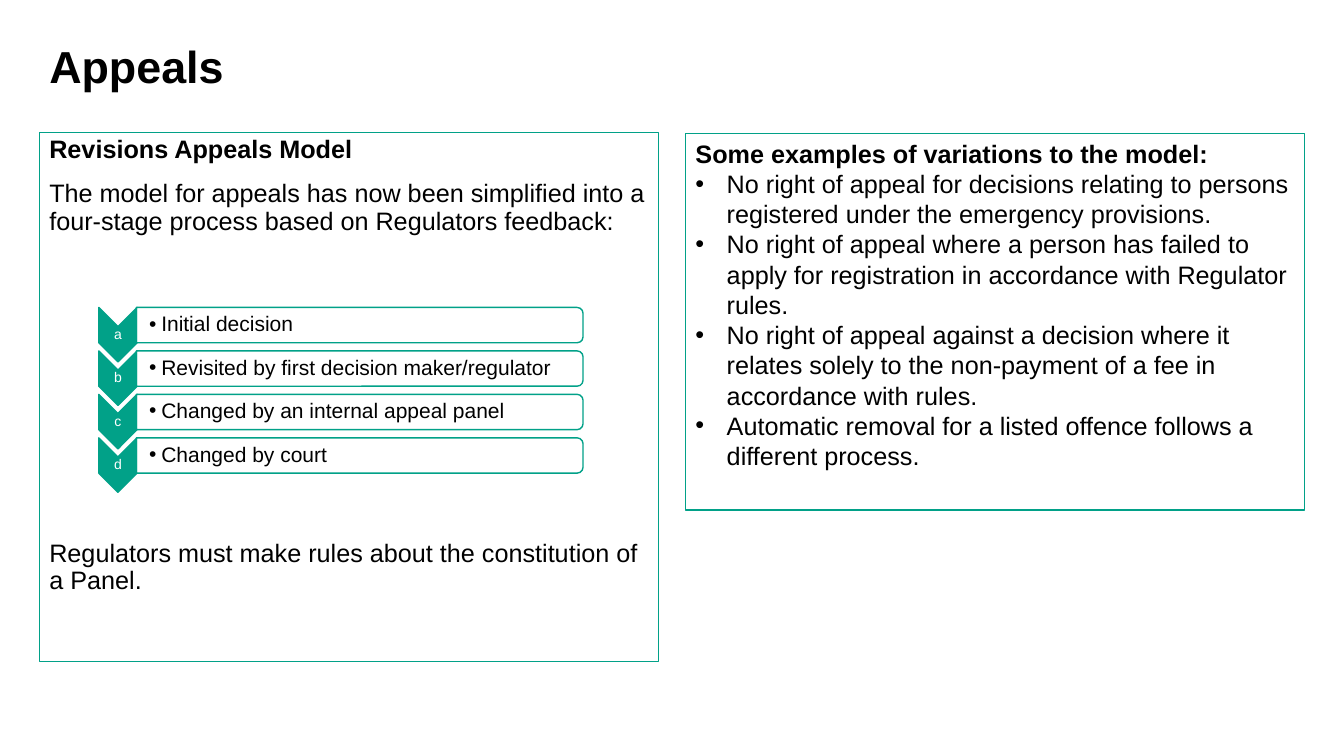
from pptx import Presentation
from pptx.dml.color import RGBColor
from pptx.enum.shapes import MSO_SHAPE as SHAPE
from pptx.enum.text import MSO_ANCHOR as ANCHOR, PP_ALIGN as ALIGN
from pptx.oxml.ns import qn
from pptx.util import Inches, Pt
from lxml import etree

COLORS = {"text": "000000", "accent": "01A188", "white": "FFFFFF"}
BODY = {"size": Pt(18)}
HEADING = {**BODY, "bold": True}
TIGHT = {"line_spacing": 0.9}
SPACED = {**TIGHT, "space_after": Pt(12)}
SMALL_INSETS = {f"margin_{side}": Inches(0.01) for side in ("left", "top", "right", "bottom")}


def rgb(name):
    return RGBColor.from_string(COLORS[name])


def style(target, values):
    for name, value in values.items():
        setattr(target, name, value)


class Deck:
    """Slide builder; lengths are columns and rows of a 100 by 100 grid."""
    font = "Arial"

    def __init__(self):
        self.prs = Presentation()
        self.prs.slide_width, self.prs.slide_height = Inches(13.33), Inches(7.5)
        self.s = self.prs.slides.add_slide(self.prs.slide_layouts[6])

    def place(self, x, y, w, h):
        col, row = self.prs.slide_width / 100, self.prs.slide_height / 100
        return [round(v) for v in (x * col, y * row, w * col, h * row)]

    def shape(self, kind, box, fill=None, line=1.0, turned=False, opacity=100):
        """Draw a preset shape; a turned one fills the box after a quarter turn."""
        x, y, w, h = self.place(*box)
        if turned:
            x, y, w, h = x + (w - h) // 2, y + (h - w) // 2, h, w
        sp = self.s.shapes.add_shape(kind, x, y, w, h)
        sp.rotation = 90 if turned else 0
        sp.shadow.inherit = False
        sp.line.color.rgb, sp.line.width = rgb("accent"), Pt(line)
        if fill is None:
            sp.fill.background()
        else:
            sp.fill.solid()
            sp.fill.fore_color.rgb = rgb(fill)
            if opacity < 100:
                color = sp._element.spPr.find(f"{qn('a:solidFill')}/{qn('a:srgbClr')}")
                etree.SubElement(color, qn("a:alpha"), val=str(opacity * 1000))
        return sp

    def textbox(self, box):
        return self.s.shapes.add_textbox(*self.place(*box))

    def add_text(self, sp, paragraphs, frame=None, color="text"):
        """Fill a shape with (text, font, paragraph format, bullet indent) entries."""
        tf = sp.text_frame
        style(tf, {"word_wrap": True, "vertical_anchor": ANCHOR.TOP, **(frame or {})})
        for i, (text, font, fmt, indent) in enumerate(paragraphs):
            p = tf.add_paragraph() if i else tf.paragraphs[0]
            if indent:
                self.bullet(p, indent)
            style(p, {"alignment": ALIGN.LEFT, **fmt})
            r = p.add_run()
            r.text = text
            style(r.font, {"name": self.font, **font})
            r.font.color.rgb = rgb(color)

    def bullet(self, p, indent):
        pPr = p._p.get_or_add_pPr()
        pPr.set("marL", str(Inches(indent)))
        pPr.set("indent", str(-Inches(indent)))
        etree.SubElement(pPr, qn("a:buFont"), typeface=self.font)
        etree.SubElement(pPr, qn("a:buChar"), char="•")

    def stage(self, y, letter, text):
        """Draw one step: a downward chevron with its letter and a rounded bar."""
        self.shape(SHAPE.CHEVRON, (7.35, y, 2.85, 7.2), "accent", turned=True)
        self.add_text(self.textbox((7.35, y + 2.53, 2.85, 2.13)),
                      [(letter, {"size": Pt(10)}, {**TIGHT, "alignment": ALIGN.CENTER}, 0)],
                      {**SMALL_INSETS, "vertical_anchor": ANCHOR.MIDDLE}, "white")
        self.shape(SHAPE.ROUND_2_SAME_RECTANGLE, (10.15, y, 33.23, 4.67), "white",
                   turned=True, opacity=90)
        self.add_text(self.textbox((10.2, y + 0.2, 33.08, 4.27)),
                      [(text, {"size": Pt(15)}, TIGHT, 0.12)],
                      {**SMALL_INSETS, "margin_left": Inches(0.12),
                       "vertical_anchor": ANCHOR.MIDDLE})


def main():
    deck = Deck()
    deck.add_text(deck.textbox((2.93, 5.2, 93.92, 12.27)),
                  [("Appeals", {"size": Pt(32), "bold": True}, TIGHT, 0)])

    model = deck.shape(SHAPE.RECTANGLE, (2.93, 17.47, 46.06, 70), line=0.75)
    deck.add_text(model, [
        ("Revisions Appeals Model", HEADING, SPACED, 0),
        ("The model for appeals has now been simplified into a four-stage process "
         "based on Regulators feedback:", BODY, SPACED, 0),
        ("Regulators must make rules about the constitution of a Panel.",
         BODY, {**SPACED, "space_before": Pt(206)}, 0),
    ])

    stages = ["Initial decision", "Revisited by first decision maker/regulator",
              "Changed by an internal appeal panel", "Changed by court"]
    for i, (letter, text) in enumerate(zip("abcd", stages)):
        deck.stage(40.67 + 5.75 * i, letter, text)

    variations = [
        "No right of appeal for decisions relating to persons registered under the "
        "emergency provisions.",
        "No right of appeal where a person has failed to apply for registration in "
        "accordance with Regulator rules.",
        "No right of appeal against a decision where it relates solely to the "
        "non-payment of a fee in accordance with rules.",
        "Automatic removal for a listed offence follows a different process.",
    ]
    examples = deck.shape(SHAPE.RECTANGLE, (51.01, 17.6, 46.06, 49.87), line=0.75)
    deck.add_text(examples, [("Some examples of variations to the model:", HEADING, {}, 0)]
                  + [(text, BODY, {}, 0.31) for text in variations])

    deck.prs.save("out.pptx")


if __name__ == "__main__":
    main()
